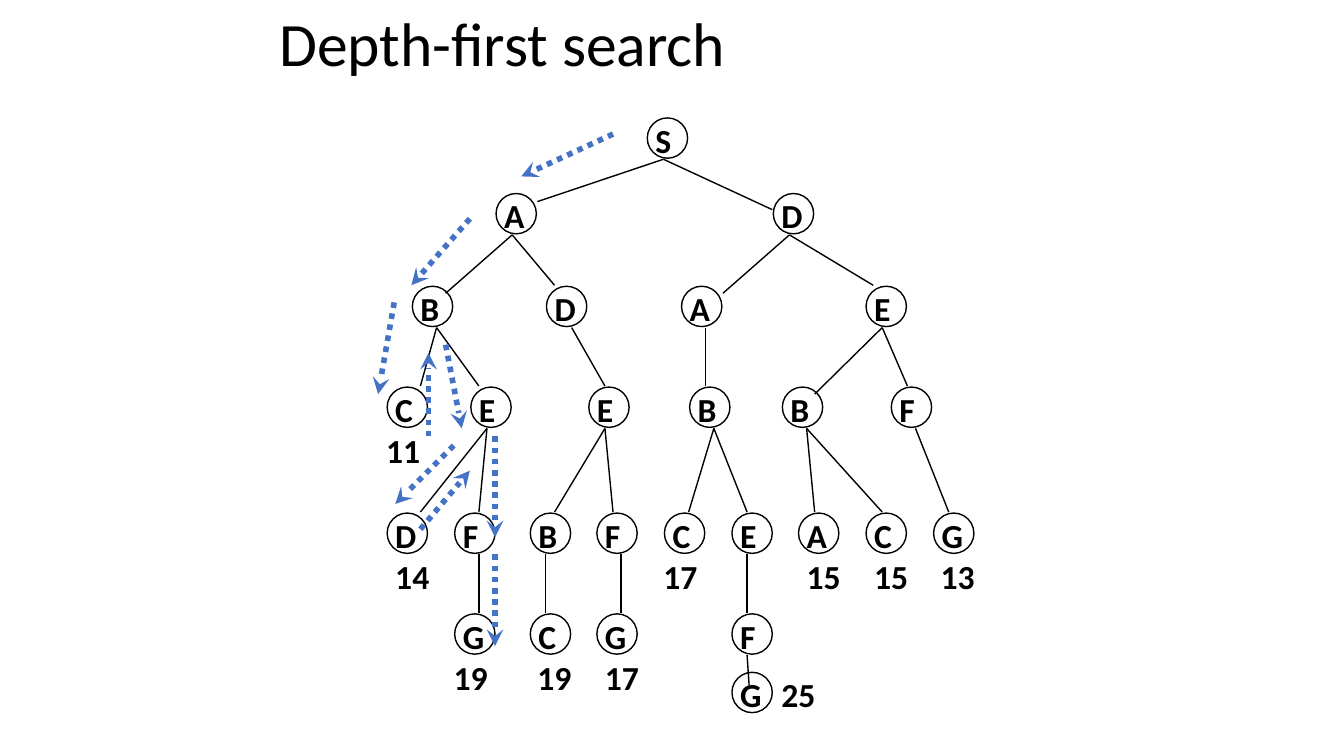
"""Build a slide that traces depth-first search through a tree."""
from typing import NamedTuple

from pptx import Presentation
from pptx.dml.color import RGBColor
from pptx.enum.dml import MSO_LINE
from pptx.enum.shapes import MSO_CONNECTOR, MSO_SHAPE
from pptx.enum.text import MSO_ANCHOR, MSO_AUTO_SIZE
from pptx.oxml.ns import qn
from pptx.util import Cm, Pt
from lxml.etree import SubElement

COLORS = {"ink": "000000", "path": "4472C4"}
FONT = "Calibri"
CM_PER_INCH = 2.54
DIAMETER = 0.4
COST_WIDTH = 0.48
LETTER_WIDTHS = {"S": 0.3, "A": 0.34, "B": 0.33, "C": 0.32,
                 "D": 0.35, "E": 0.31, "F": 0.29, "G": 0.35}

Point = tuple[float, float]


class Level(NamedTuple):
    top: float
    nodes: list[tuple[str, float]]


class Fan(NamedTuple):
    parent: Point
    children: list[Point]


class Step(NamedTuple):
    start: Point
    end: Point


class Cost(NamedTuple):
    value: str
    left: float
    top: float


LEVELS = [
    Level(1.17, [("S", 6.42)]),
    Level(1.92, [("A", 4.92), ("D", 7.67)]),
    Level(2.84, [("B", 4.09), ("D", 5.42), ("A", 6.76), ("E", 8.59)]),
    Level(3.84, [("C", 3.84), ("E", 4.67), ("E", 5.84), ("B", 6.84),
                 ("B", 7.76), ("F", 8.84)]),
    Level(5.09, [("D", 3.84), ("F", 4.51), ("B", 5.26), ("F", 5.92), ("C", 6.59),
                 ("E", 7.26), ("A", 7.92), ("C", 8.59), ("G", 9.26)]),
    Level(6.09, [("G", 4.51), ("C", 5.26), ("G", 5.92), ("F", 7.26)]),
    Level(6.67, [("G", 7.26)]),
]

FANS = [
    Fan((6.58, 1.58), [(5.33, 2), (7.66, 2.08)]),
    Fan((5.08, 2.33), [(4.42, 2.91), (5.5, 2.83)]),
    Fan((7.83, 2.33), [(7.17, 2.91), (8.66, 2.83)]),
    Fan((4.33, 3.25), [(4.17, 3.83), (4.75, 3.83)]),
    Fan((5.67, 3.25), [(6, 3.83)]),
    Fan((7, 3.25), [(7, 3.83)]),
    Fan((8.75, 3.25), [(8.08, 3.91), (9, 3.83)]),
    Fan((4.83, 4.25), [(4.17, 5.08), (4.75, 5.08)]),
    Fan((6, 4.25), [(5.5, 5.08), (6.08, 5.08)]),
    Fan((7.08, 4.25), [(6.83, 5.08), (7.41, 5.08)]),
    Fan((8, 4.25), [(8.08, 5.08), (8.75, 5.08)]),
    Fan((9.08, 4.25), [(9.41, 5.08)]),
    *[Fan((x, 5.5), [(x, 6.08)]) for x in (4.75, 5.41, 6.16, 7.41)],
    Fan((7.41, 6.5), [(7.43, 6.8)]),
]

COSTS = [
    Cost("11", 3.76, 4.3),
    *[Cost(value, left, 5.55) for value, left in
      [("14", 3.85), ("17", 6.51), ("15", 7.93), ("15", 8.6), ("13", 9.26)]],
    *[Cost(value, left, 6.55) for value, left in
      [("19", 4.43), ("19", 5.26), ("17", 5.93)]],
    Cost("25", 7.68, 6.72),
]

STEPS = [
    Step((6.08, 1.33), (5.17, 1.75)),
    Step((4.66, 2.17), (4.08, 2.83)),
    Step((3.91, 3), (3.75, 3.91)),
    Step((4.25, 4.33), (4.25, 3.5)),
    Step((4.42, 3.42), (4.58, 4.25)),
    Step((4.5, 4.42), (3.92, 5)),
    Step((4.17, 5.25), (4.66, 4.67)),
    Step((4.91, 4.33), (4.91, 5.33)),
    Step((4.91, 5.5), (4.91, 6.41)),
]


def length(inches: float) -> Cm:
    return Cm(inches * CM_PER_INCH)


def color(name: str) -> RGBColor:
    return RGBColor.from_string(COLORS[name])


def add_text(slide, text: str, left: float, top: float, width: float, height: float,
             size: float, bold: bool, spacing: float):
    box = slide.shapes.add_textbox(*map(length, (left, top, width, height)))
    frame = box.text_frame
    frame.word_wrap = True
    frame.text = text
    paragraph = frame.paragraphs[0]
    paragraph.line_spacing = spacing
    font = paragraph.runs[0].font
    font.name, font.size, font.bold = FONT, Pt(size), bold
    font.color.rgb = color("ink")
    return frame


def add_label(slide, text: str, left: float, top: float, width: float) -> None:
    frame = add_text(slide, text, left, top, width, 0.4, 24, True, 0.85)
    frame.word_wrap = False
    frame.auto_size = MSO_AUTO_SIZE.SHAPE_TO_FIT_TEXT
    frame.margin_left = frame.margin_right = length(0.07)
    frame.margin_top = frame.margin_bottom = length(0.03)


def add_node(slide, letter: str, left: float, top: float) -> None:
    circle = slide.shapes.add_shape(
        MSO_SHAPE.OVAL, *map(length, (left, top, DIAMETER, DIAMETER)))
    circle.shadow.inherit = False
    circle.fill.background()
    circle.line.color.rgb = color("ink")
    circle.line.width = Pt(1)
    add_label(slide, letter, left + 0.01, top + 0.05, LETTER_WIDTHS[letter])


def add_line(slide, start: Point, end: Point, color_name: str, width: float):
    connector = slide.shapes.add_connector(
        MSO_CONNECTOR.STRAIGHT, *map(length, (*start, *end)))
    connector.line.color.rgb = color(color_name)
    connector.line.width = Pt(width)
    SubElement(connector._element.spPr, qn("a:effectLst"))
    return connector


def add_step(slide, step: Step) -> None:
    arrow = add_line(slide, step.start, step.end, "path", 4)
    arrow.line.dash_style = MSO_LINE.ROUND_DOT
    outline = arrow._element.spPr.find(qn("a:ln"))
    SubElement(outline, qn("a:tailEnd"), type="stealth")


def main() -> None:
    presentation = Presentation()
    presentation.slide_width = length(13.33)
    presentation.slide_height = length(7.5)
    slide = presentation.slides.add_slide(presentation.slide_layouts[6])

    title = add_text(slide, "Depth-first search", 2.67, 0, 8.42, 0.92, 44, False, 0.9)
    title.vertical_anchor = MSO_ANCHOR.MIDDLE
    for level in LEVELS:
        for letter, left in level.nodes:
            add_node(slide, letter, left, level.top)
    for fan in FANS:
        for child in fan.children:
            add_line(slide, fan.parent, child, "ink", 1)
    for cost in COSTS:
        add_label(slide, cost.value, cost.left, cost.top, COST_WIDTH)
    for step in STEPS:
        add_step(slide, step)

    presentation.save("out.pptx")


if __name__ == "__main__":
    main()
